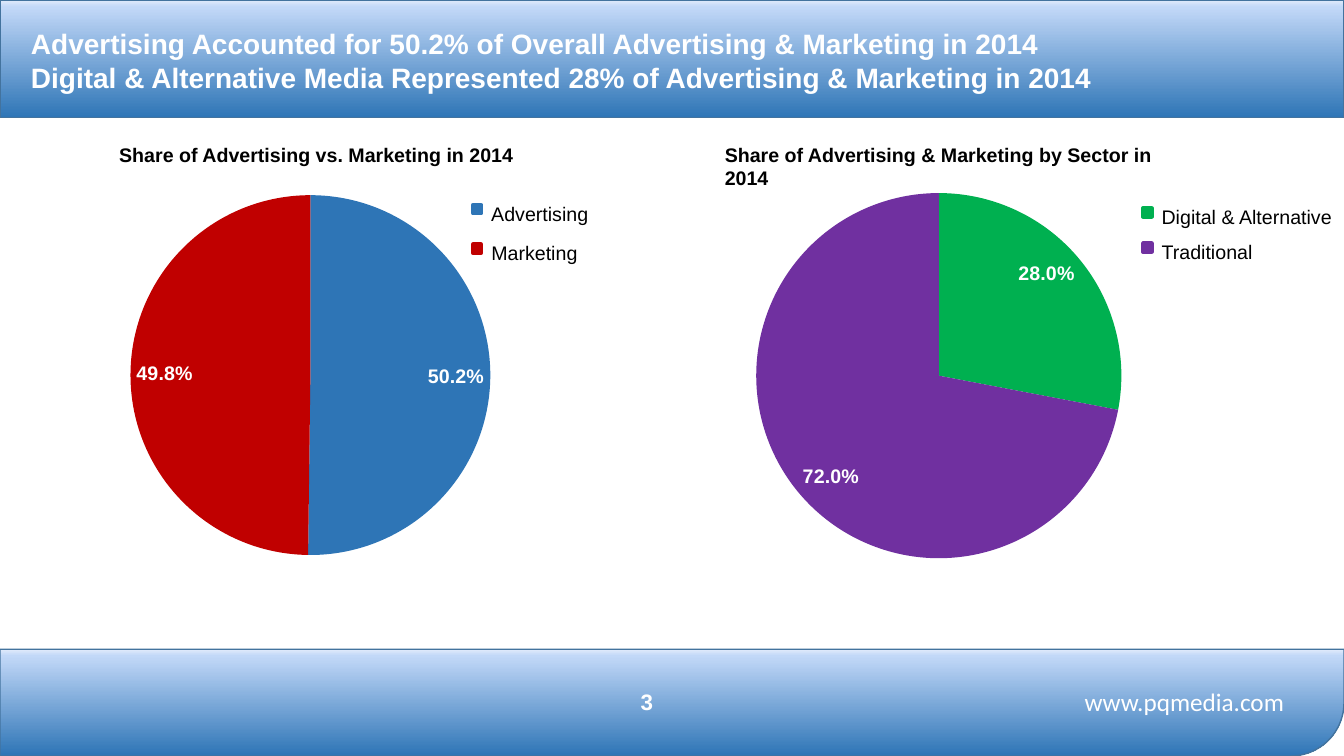
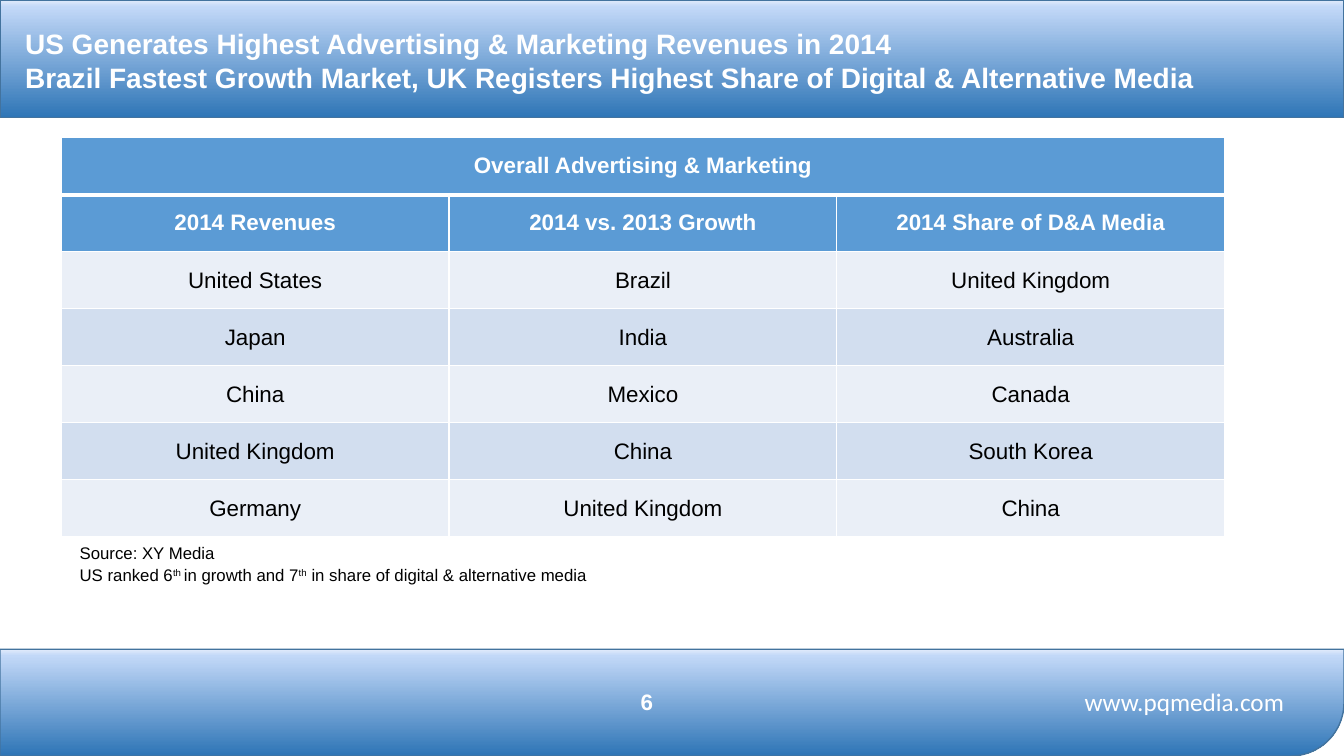
from math import cos, pi, sin

from pptx import Presentation
from pptx.chart.data import CategoryChartData
from pptx.dml.color import RGBColor
from pptx.enum.chart import XL_CHART_TYPE, XL_LABEL_POSITION
from pptx.enum.shapes import MSO_SHAPE
from pptx.enum.text import MSO_ANCHOR, PP_ALIGN
from pptx.oxml import parse_xml
from pptx.oxml.ns import nsdecls, qn
from pptx.util import Emu, Pt

PIE, INSIDE_END = XL_CHART_TYPE.PIE, XL_LABEL_POSITION.INSIDE_END
RECTANGLE = MSO_SHAPE.RECTANGLE
TOP, MIDDLE = MSO_ANCHOR.TOP, MSO_ANCHOR.MIDDLE
LEFT, CENTER = PP_ALIGN.LEFT, PP_ALIGN.CENTER

# Grid of the slide: 160 columns by 90 rows of square units
COLS, ROWS, UNIT = 160, 90, 76200
BAND_TOP, CORNER = 77.3, 6.35

WHITE, BLACK = "FFFFFF", "000000"
BLUE, RED, GREEN, PURPLE = "2E75B6", "C00000", "00B050", "7030A0"
BAND_LINE, HEADER = "43739E", "5B9BD5"
ROW_FILLS = ("EAEFF7", "D2DEEF")
BAND_STOPS = ((0, "E1EBFB"), (6, "C2D8F8"), (100, BLUE))
PLOT = {"x": 0.192, "y": 0.011, "w": 0.631, "h": 0.956}


def grid(*units):
    return [Emu(round(u * UNIT)) for u in units]


def color(hex_code):
    return RGBColor.from_string(hex_code)


def set_font(font, size, hex_code=BLACK, bold=False, name="Arial"):
    font.name, font.size, font.bold = name, Pt(size), bold
    font.color.rgb = color(hex_code)


def fill_text(tf, text, align=LEFT, anchor=TOP, **font):
    """Lines are split at newlines; text between carets is superscript."""
    tf.vertical_anchor = anchor
    for i, line in enumerate(text.split("\n")):
        p = tf.paragraphs[0] if i == 0 else tf.add_paragraph()
        p.alignment = align
        for j, part in enumerate(line.split("^")):
            r = p.add_run()
            r.text = part
            set_font(r.font, **font)
            if j % 2:
                r._r.get_or_add_rPr().set("baseline", "30000")


def add_text(s, at, text, wrap=True, **style):
    tf = s.shapes.add_textbox(*grid(*at)).text_frame
    tf.word_wrap = wrap
    fill_text(tf, text, **style)


# Shared bands, title and footer
def style_band(sp):
    stops = "".join(f'<a:gs pos="{pos * 1000}"><a:srgbClr val="{c}"/></a:gs>'
                    for pos, c in BAND_STOPS)
    sp.shadow.inherit = False
    sp.fill.gradient()
    spPr = sp._element.spPr
    spPr.replace(spPr.find(qn("a:gradFill")), parse_xml(
        f'<a:gradFill {nsdecls("a")} rotWithShape="1"><a:gsLst>{stops}</a:gsLst>'
        '<a:lin ang="5400000" scaled="0"/></a:gradFill>'))
    sp.line.color.rgb = color(BAND_LINE)
    sp.line.width = Pt(1)


def add_footer_band(s):
    angles = [pi / 2 * i / 24 for i in range(25)]
    arc = [grid(COLS - CORNER + CORNER * cos(a), ROWS - CORNER + CORNER * sin(a))
           for a in angles]
    builder = s.shapes.build_freeform(*grid(0, BAND_TOP))
    builder.add_line_segments([grid(COLS, BAND_TOP), *arc, grid(0, ROWS)], close=True)
    style_band(builder.convert_to_shape())


def add_slide(prs, title, title_left, number):
    s = prs.slides.add_slide(prs.slide_layouts[6])
    add_footer_band(s)
    style_band(s.shapes.add_shape(RECTANGLE, *grid(0, 0, COLS, 14)))
    add_text(s, (63, 81.1, 28, 4.8), number, align=CENTER, anchor=MIDDLE,
             size=16, hex_code=WHITE, bold=True)
    add_text(s, (122, 81.1, 38, 4.8), "www.pqmedia.com", align=CENTER,
             anchor=MIDDLE, size=18, hex_code=WHITE, name="Calibri")
    add_text(s, (title_left, 2.6, 152, 8), title, size=20, hex_code=WHITE, bold=True)
    return s


# Pie chart and its legend
def add_pie(s, at, values, colors):
    data = CategoryChartData(number_format="0.0%")
    data.categories = ["1", "2"]
    data.add_series("Series 1", values)
    chart = s.shapes.add_chart(PIE, *grid(*at), data).chart
    chart.has_legend = chart.has_title = False
    set_font(chart.font, 10, name="Calibri")

    plot = chart.plots[0]
    plot.vary_by_categories = True
    for i, hex_code in enumerate(colors):
        fmt = plot.series[0].points[i].format
        fmt.fill.solid()
        fmt.fill.fore_color.rgb = color(hex_code)
        fmt.line.fill.background()

    plot.has_data_labels = True
    labels = plot.data_labels
    labels.show_value, labels.show_percentage = True, False
    labels.number_format, labels.number_format_is_linked = "0.0%", False
    labels.position = INSIDE_END
    set_font(labels.font, 14, WHITE, bold=True)

    area = chart._chartSpace.chart.plotArea
    for old in area.findall(qn("c:layout")):
        area.remove(old)
    sizes = "".join(f'<c:{k} val="{v}"/>' for k, v in PLOT.items())
    area.insert(0, parse_xml(
        f'<c:layout {nsdecls("c")}><c:manualLayout><c:layoutTarget val="inner"/>'
        f'<c:xMode val="edge"/><c:yMode val="edge"/>{sizes}'
        '</c:manualLayout></c:layout>'))


def add_legend(s, left, top, step, entries):
    for i, (name, width, hex_code) in enumerate(entries):
        y = top + i * step
        key = s.shapes.add_shape(RECTANGLE, *grid(left, y, 1, 1))
        key.shadow.inherit = False
        key.fill.solid()
        key.fill.fore_color.rgb = key.line.color.rgb = color(hex_code)
        key.line.width = Pt(3)
        add_text(s, (left + 1, y - 1, width, 4.1), name, wrap=False, size=14)


# Table
def set_borders(cell, bottom=1):
    tcPr = cell._tc.get_or_add_tcPr()
    for side, width in (("L", 1), ("R", 1), ("T", 1), ("B", bottom)):
        tcPr.append(parse_xml(
            f'<a:ln{side} {nsdecls("a")} w="{Pt(width)}"><a:solidFill>'
            f'<a:srgbClr val="{WHITE}"/></a:solidFill></a:ln{side}>'))


def add_ranking(s, at, heading, rows):
    table = s.shapes.add_table(len(rows) + 1, len(rows[0]), *grid(*at)).table
    table.horz_banding = False
    blank = [""] * (len(rows[0]) - 1)
    for i, row in enumerate([[heading, *blank], *rows]):
        head = i < 2
        for j, text in enumerate(row):
            cell = table.cell(i, j)
            set_borders(cell, bottom=3 if i == 0 else 1)
            cell.fill.solid()
            cell.fill.fore_color.rgb = color(HEADER if head else ROW_FILLS[i % 2])
            cell.vertical_anchor = MIDDLE
            if not head:
                cell.margin_left = cell.margin_right = cell.margin_top = Pt(0.7)
                cell.margin_bottom = 0
            if text:
                fill_text(cell.text_frame, text, align=CENTER, anchor=MIDDLE, size=16,
                          hex_code=WHITE if head else BLACK, bold=head)
    table.cell(0, 0).merge(table.cell(0, len(blank)))


def share_slide(prs):
    s = add_slide(
        prs, "Advertising Accounted for 50.2% of Overall Advertising & Marketing in 2014\n"
        "Digital & Alternative Media Represented 28% of Advertising & Marketing in 2014",
        2.5, "3")
    add_text(s, (13, 16.4, 50.5, 4.1), "Share of Advertising vs. Marketing in 2014",
             size=14, bold=True)
    add_pie(s, (2.5, 16.4, 67.9, 57.8), (0.502, 0.498), (BLUE, RED))
    add_legend(s, 56.3, 24.4, 4.7,
               [("Advertising", 14.2, BLUE), ("Marketing", 12.8, RED)])
    add_text(s, (85.1, 16.4, 58, 4.1),
             "Share of Advertising & Marketing by Sector in 2014", size=14, bold=True)
    add_pie(s, (76.8, 19.7, 68.9, 51.2), (0.28, 0.72), (GREEN, PURPLE))
    add_legend(s, 136.1, 24.8, 4.2,
               [("Digital & Alternative", 22.9, GREEN), ("Traditional", 13.3, PURPLE)])


def ranking_slide(prs):
    s = add_slide(
        prs, "US Generates Highest Advertising & Marketing Revenues in 2014\n"
        "Brazil Fastest Growth Market, UK Registers Highest Share of "
        "Digital & Alternative Media", 1.8, "6")
    add_ranking(s, (7.3, 16.4, 138.5, 47.5), "Overall Advertising & Marketing", [
        ("2014 Revenues", "2014 vs. 2013 Growth", "2014 Share of D&A Media"),
        ("United States", "Brazil", "United Kingdom"),
        ("Japan", "India", "Australia"),
        ("China", "Mexico", "Canada"),
        ("United Kingdom", "China", "South Korea"),
        ("Germany", "United Kingdom", "China"),
    ])
    notes = ("Source: XY Media",
             "US ranked 6^th ^in growth and 7^th^ in share of digital & alternative media")
    for i, note in enumerate(notes):
        add_text(s, (8.3, 64 + 2.7 * i, 70, 3.6), note, size=12)


def main():
    prs = Presentation()
    prs.slide_width, prs.slide_height = grid(COLS, ROWS)
    share_slide(prs)
    ranking_slide(prs)
    prs.save("out.pptx")


if __name__ == "__main__":
    main()
